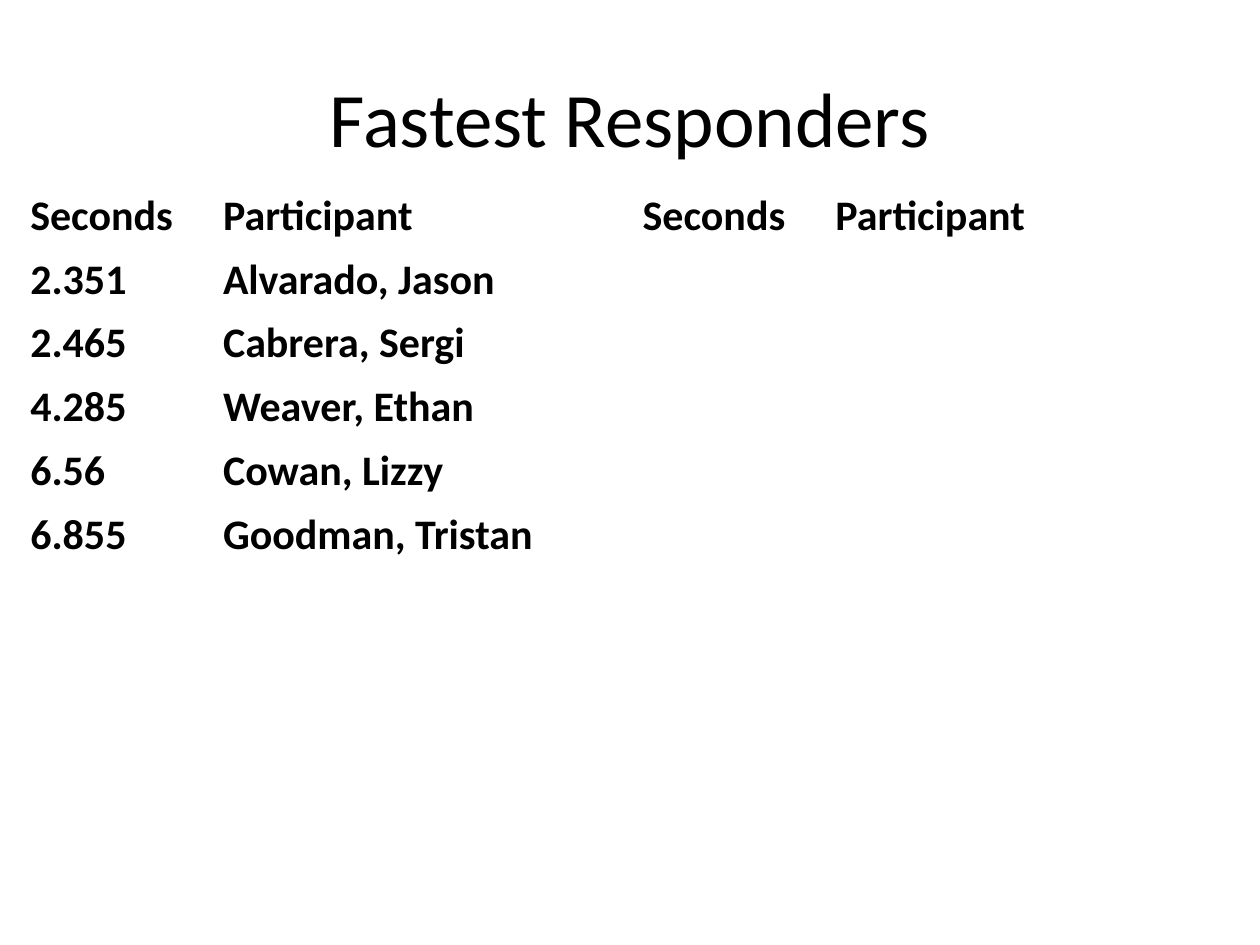
from dataclasses import dataclass

from lxml.etree import SubElement
from pptx import Presentation
from pptx.dml.color import RGBColor
from pptx.enum.text import MSO_ANCHOR, PP_ALIGN
from pptx.oxml.ns import qn
from pptx.util import Inches, Pt


@dataclass(frozen=True)
class Theme:
    font: str = "Calibri"
    text: str = "000000"
    paper: str = "FFFFFF"
    title_size: int = 44
    table_size: int = 24
    border: int = 1
    closing_border: int = 3


THEME = Theme()
HEADINGS = ("Seconds", "Participant") * 2
RESPONDERS = [
    ("2.351", "Alvarado, Jason"),
    ("2.465", "Cabrera, Sergi"),
    ("4.285", "Weaver, Ethan"),
    ("6.56", "Cowan, Lizzy"),
    ("6.855", "Goodman, Tristan"),
]
ROW_COUNT = 11
ROW_HEIGHT = 0.5
COLUMN_WIDTHS = (1.53, 3.33) * 2


def format_font(font, size, bold=False):
    font.name = THEME.font
    font.size = Pt(size)
    font.bold = bold
    font.color.rgb = RGBColor.from_string(THEME.text)


def add_title(slide, text):
    title = slide.shapes.title
    title.left, title.top = Inches(0.5), Inches(0.3)
    title.width, title.height = Inches(9), Inches(1.25)
    frame = title.text_frame
    frame.text = text
    frame.vertical_anchor = MSO_ANCHOR.MIDDLE
    para = frame.paragraphs[0]
    para.alignment = PP_ALIGN.CENTER
    format_font(para.runs[0].font, THEME.title_size)


def set_borders(cell, bottom_width):
    properties = cell._tc.get_or_add_tcPr()
    widths = {"L": THEME.border, "R": THEME.border, "T": THEME.border, "B": bottom_width}
    for side, width in widths.items():
        line = SubElement(properties, qn(f"a:ln{side}"), w=str(Pt(width)))
        fill = SubElement(line, qn("a:solidFill"))
        SubElement(fill, qn("a:srgbClr"), val=THEME.paper)


def fill_cell(cell, text, bottom_width):
    set_borders(cell, bottom_width)
    cell.fill.solid()
    cell.fill.fore_color.rgb = RGBColor.from_string(THEME.paper)
    para = cell.text_frame.paragraphs[0]
    if text:
        para.text = text
        format_font(para.runs[0].font, THEME.table_size, bold=True)


def add_ranking(slide):
    """Add the table, with spare rows and a spare pair of columns."""
    table = slide.shapes.add_table(
        ROW_COUNT, len(COLUMN_WIDTHS), Inches(0.14), Inches(1.46),
        Inches(sum(COLUMN_WIDTHS)), Inches(ROW_COUNT * ROW_HEIGHT),
    ).table
    for column, width in zip(table.columns, COLUMN_WIDTHS):
        column.width = Inches(width)
    content = [HEADINGS, *RESPONDERS]
    for row_index, row in enumerate(table.rows):
        row.height = Inches(ROW_HEIGHT)
        values = content[row_index] if row_index < len(content) else ()
        is_last = row_index == ROW_COUNT - 1
        bottom_width = THEME.closing_border if is_last else THEME.border
        for column_index, cell in enumerate(row.cells):
            text = values[column_index] if column_index < len(values) else ""
            fill_cell(cell, text, bottom_width)


def main():
    deck = Presentation()
    deck.slide_width, deck.slide_height = Inches(10), Inches(7.5)
    slide = deck.slides.add_slide(deck.slide_layouts[5])
    add_title(slide, "Fastest Responders")
    add_ranking(slide)
    deck.save("out.pptx")


if __name__ == "__main__":
    main()
